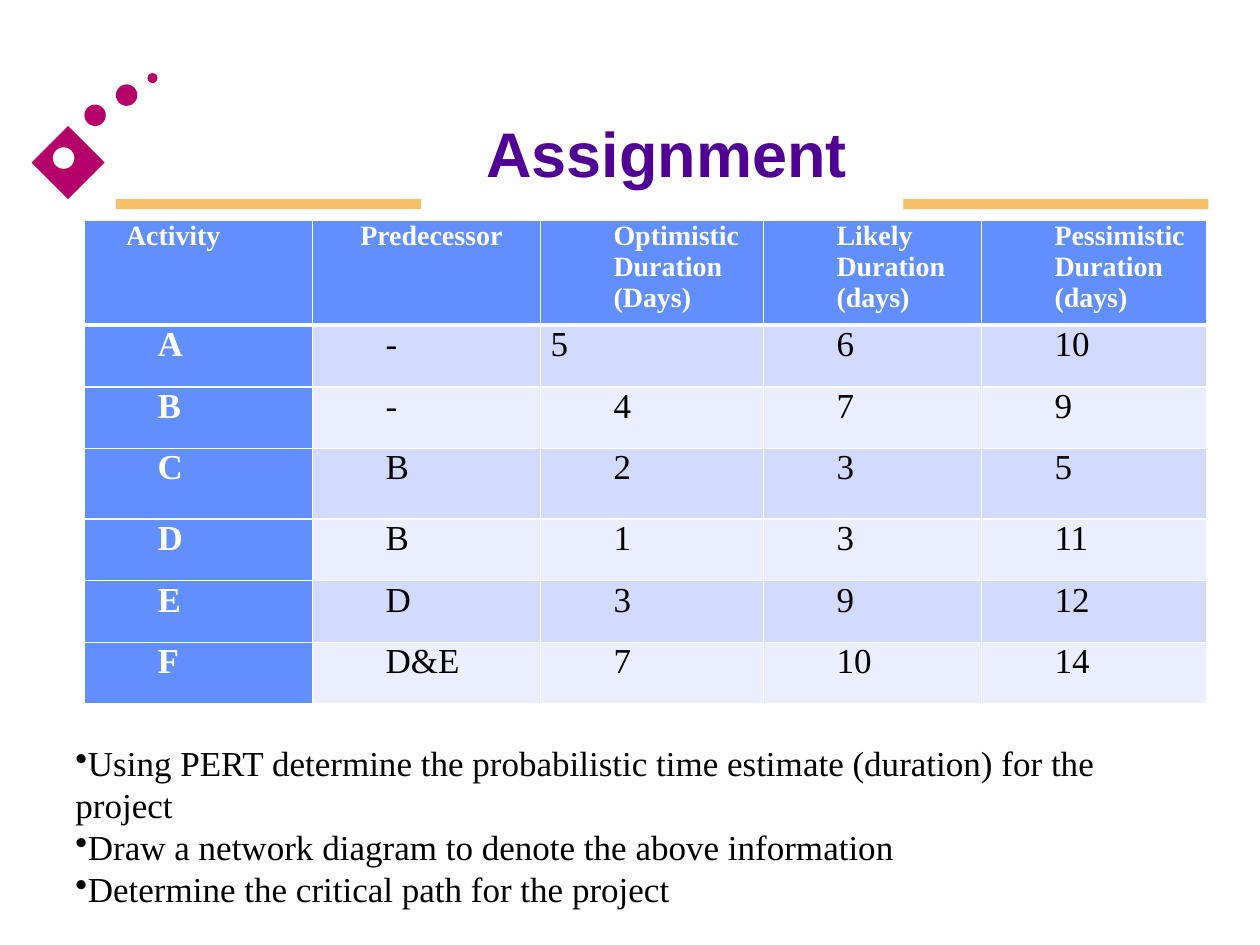
from lxml import etree
from pptx import Presentation, util as u
from pptx.dml.color import RGBColor
from pptx.enum import shapes, text
from pptx.oxml import ns

WHITE = RGBColor(0xFF, 0xFF, 0xFF)
BLACK = RGBColor(0, 0, 0)
PURPLE = RGBColor(0x50, 0x00, 0x93)
MAGENTA = RGBColor(0xB5, 0x00, 0x69)
AMBER = RGBColor(0xF6, 0xBF, 0x69)
BLUE = RGBColor(0x61, 0x8F, 0xFD)
BANDS = (RGBColor(0xD2, 0xDB, 0xFE), RGBColor(0xEA, 0xEE, 0xFF))

TITLE = {"name": "Arial", "size": u.Pt(36), "bold": True, "color": PURPLE}
BODY = {"name": "Times New Roman", "size": u.Pt(20), "bold": False, "color": BLACK}
LABEL = {**BODY, "bold": True, "color": WHITE}
HEADER = {**LABEL, "size": u.Pt(16)}

COLUMNS = (1.81, 1.81, 1.77, 1.73, 1.79)
ROWS = (0.83, 0.49, 0.49, 0.56, 0.49, 0.49, 0.49)
HEADINGS = (
    ["Activity"],
    ["Predecessor"],
    ["Optimistic Duration (Days)"],
    ["Likely Duration", "(days)"],
    ["Pessimistic Duration", "(days)"],
)
# Left margin and first-line indent of each heading
HEADING_INDENTS = ((0.25, 0), (0.5, -0.2), (0.5, 0), (0.5, 0), (0.5, 0))
ACTIVITIES = (
    ("A", "-", "5", "6", "10"),
    ("B", "-", "4", "7", "9"),
    ("C", "B", "2", "3", "5"),
    ("D", "B", "1", "3", "11"),
    ("E", "D", "3", "9", "12"),
    ("F", "D&E", "7", "10", "14"),
)
TASKS = (
    "Using PERT determine the probabilistic time estimate (duration) for the project",
    "Draw a network diagram to denote the above information",
    "Determine the critical path for the project",
)


class SlideBuilder:
    def __init__(self, slide):
        self.slide = slide

    def shape(self, kind, box, color):
        shape = self.slide.shapes.add_shape(kind, *map(u.Inches, box))
        shape.shadow.inherit = False
        shape.fill.solid()
        shape.fill.fore_color.rgb = color
        shape.line.fill.background()

    def paragraphs(self, frame, lines, style, align=None, indent=(0, 0), bullet=None, spacing=None):
        for index, line in enumerate(lines):
            paragraph = frame.paragraphs[0] if index == 0 else frame.add_paragraph()
            paragraph.alignment = align
            paragraph.line_spacing = spacing
            properties = paragraph._p.get_or_add_pPr()
            for name, value in zip(("marL", "indent"), indent):
                properties.set(name, str(u.Inches(value)))
            if bullet:
                etree.SubElement(properties, ns.qn("a:buChar")).set("char", bullet)
            run = paragraph.add_run()
            run.text = line
            for name, value in style.items():
                if name == "color":
                    run.font.color.rgb = value
                else:
                    setattr(run.font, name, value)

    def text_box(self, box, lines, style, auto_size=text.MSO_AUTO_SIZE.NONE, **layout):
        frame = self.slide.shapes.add_textbox(*map(u.Inches, box)).text_frame
        frame.word_wrap = True
        frame.auto_size = auto_size
        frame.vertical_anchor = text.MSO_ANCHOR.MIDDLE
        self.paragraphs(frame, lines, style, **layout)

    def table(self, left, top, columns, rows):
        frame = self.slide.shapes.add_table(
            len(rows), len(columns),
            *map(u.Inches, (left, top, sum(columns), sum(rows))))
        for column, width in zip(frame.table.columns, columns):
            column.width = u.Inches(width)
        for row, height in zip(frame.table.rows, rows):
            row.height = u.Inches(height)
        return frame.table

    def cell(self, cell, lines, style, fill, borders, **layout):
        margins = {"margin_left": 0.08, "margin_right": 0.08, "margin_top": 0, "margin_bottom": 0}
        for name, value in margins.items():
            setattr(cell, name, u.Inches(value))
        properties = cell._tc.get_or_add_tcPr()
        for side, width in zip("LRTB", borders):
            line = etree.SubElement(properties, ns.qn(f"a:ln{side}"), w=str(u.Pt(width)))
            solid = etree.SubElement(line, ns.qn("a:solidFill"))
            etree.SubElement(solid, ns.qn("a:srgbClr"), val=str(WHITE))
        cell.fill.solid()
        cell.fill.fore_color.rgb = fill
        self.paragraphs(cell.text_frame, lines, style, **layout)


def main():
    presentation = Presentation()
    presentation.slide_width, presentation.slide_height = u.Inches(10), u.Inches(7.5)
    slide = presentation.slides.add_slide(presentation.slide_layouts[6])
    builder = SlideBuilder(slide)
    kinds = shapes.MSO_SHAPE

    # Title bars and corner ornament
    for left in (0.92, 7.17):
        builder.shape(kinds.RECTANGLE, (left, 1.58, 2.42, 0.08), AMBER)
    builder.shape(kinds.DIAMOND, (0.25, 1, 0.58, 0.58), MAGENTA)
    for left, top, size, color in (
        (0.42, 1.17, 0.17, WHITE),
        (0.67, 0.83, 0.17, MAGENTA),
        (0.92, 0.67, 0.17, MAGENTA),
        (1.17, 0.58, 0.08, MAGENTA),
    ):
        builder.shape(kinds.OVAL, (left, top, size, size), color)

    # Title
    builder.text_box((0.83, 0.67, 8.92, 1.08), ["Assignment"], TITLE,
                     align=text.PP_ALIGN.CENTER)

    # Activity table
    table = builder.table(0.67, 1.75, COLUMNS, ROWS)
    for column, (lines, indent) in enumerate(zip(HEADINGS, HEADING_INDENTS)):
        builder.cell(table.cell(0, column), lines, HEADER, BLUE, (1, 1, 1, 3), indent=indent)
    for row, values in enumerate(ACTIVITIES, start=1):
        borders = (1, 1, 3 if row == 1 else 1, 1)
        for column, value in enumerate(values):
            is_label = column == 0
            indent = (0, 0) if (row, column) == (1, 2) else (0.5, 0)
            builder.cell(table.cell(row, column), [value],
                         LABEL if is_label else BODY,
                         BLUE if is_label else BANDS[(row - 1) % 2],
                         borders, align=text.PP_ALIGN.JUSTIFY, indent=indent)

    # Tasks
    builder.text_box((0.5, 5.83, 9.08, 1.45), TASKS, BODY,
                     auto_size=text.MSO_AUTO_SIZE.SHAPE_TO_FIT_TEXT,
                     bullet="•", spacing=u.Pt(24))

    presentation.save("out.pptx")


if __name__ == "__main__":
    main()
